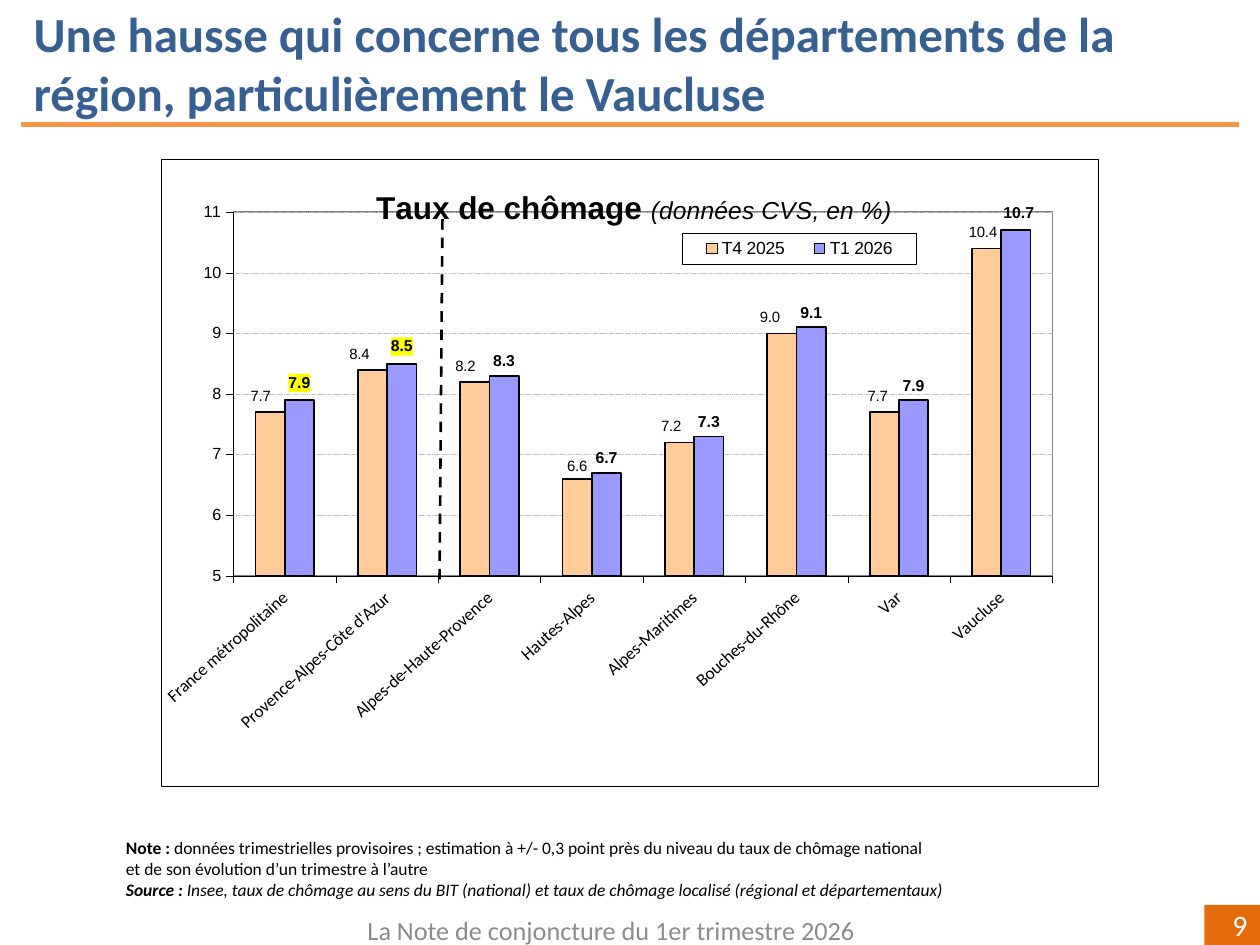
from dataclasses import dataclass

from lxml import etree
from pptx import Presentation
from pptx.chart.data import CategoryChartData
from pptx.dml.color import RGBColor
from pptx.enum.chart import XL_CHART_TYPE, XL_LABEL_POSITION, XL_LEGEND_POSITION, XL_TICK_MARK
from pptx.enum.dml import MSO_LINE
from pptx.enum.shapes import MSO_CONNECTOR, MSO_SHAPE
from pptx.enum.text import MSO_ANCHOR, PP_ALIGN
from pptx.oxml import parse_xml
from pptx.oxml.ns import nsdecls, qn
from pptx.util import Cm, Pt


@dataclass(frozen=True)
class Theme:
    heading: str = "376092"
    rule: str = "F79646"
    badge: str = "E46C0A"
    footer: str = "8C8C8C"
    black: str = "000000"
    white: str = "FFFFFF"
    grid: str = "C0C0C0"
    plot_border: str = "808080"
    highlight: str = "FFFF00"
    previous_quarter: str = "FFCC99"
    current_quarter: str = "9999FF"
    text_font: str = "Calibri"
    chart_font: str = "Arial"
    heading_size: float = 28
    badge_size: float = 17
    footer_size: float = 15
    note_size: float = 10
    chart_title_size: float = 18
    chart_unit_size: float = 14
    legend_size: float = 10
    category_size: float = 10
    value_size: float = 9.2
    label_size: float = 8.5
    strong_label_size: float = 9


THEME = Theme()
CATEGORIES = ["France métropolitaine", "Provence-Alpes-Côte d'Azur", "Alpes-de-Haute-Provence",
              "Hautes-Alpes", "Alpes-Maritimes", "Bouches-du-Rhône", "Var", "Vaucluse"]
PREVIOUS_RATES = [7.7, 8.4, 8.2, 6.6, 7.2, 9.0, 7.7, 10.4]
CURRENT_RATES = [7.9, 8.5, 8.3, 6.7, 7.3, 9.1, 7.9, 10.7]
# Horizontal label shifts, as fractions of the chart width
PREVIOUS_SHIFTS = {0: -0.01, 1: -0.014, 2: -0.01, 4: -0.009, 5: -0.013, 6: -0.007, 7: -0.004}
CURRENT_SHIFTS = {0: 0, 1: 0, 7: 0.003}


def set_font(font, size, color=THEME.black, name=THEME.text_font, bold=False, italic=False):
    font.size, font.name, font.bold, font.italic = Pt(size), name, bold, italic
    font.color.rgb = RGBColor.from_string(color)


def add_run(paragraph, text, **text_format):
    run = paragraph.add_run()
    run.text = text
    set_font(run.font, **text_format)


def set_line(line, color, width):
    line.color.rgb = RGBColor.from_string(color)
    line.width = Pt(width)


def set_fill(fill, color):
    fill.solid()
    fill.fore_color.rgb = RGBColor.from_string(color)


def area_format(fill, border=None, width=0.25):
    """Return chart spPr XML for parts that have no public format."""
    line = ""
    if border:
        line = (f'<a:ln w="{Pt(width)}"><a:solidFill><a:srgbClr val="{border}"/>'
                "</a:solidFill></a:ln>")
    return parse_xml(f'<c:spPr {nsdecls("c", "a")}><a:solidFill><a:srgbClr val="{fill}"/>'
                     f"</a:solidFill>{line}</c:spPr>")


def place_part(part, successor, **values):
    """Give a chart part a manual layout, set just before its successor element."""
    for old in part.findall(qn("c:layout")):
        part.remove(old)
    items = "".join(f'<c:{key} val="{value}"/>' for key, value in values.items())
    layout = parse_xml(f'<c:layout {nsdecls("c")}><c:manualLayout>{items}'
                       "</c:manualLayout></c:layout>")
    part.find(qn(successor)).addprevious(layout)


class SlideBuilder:
    def __init__(self, slide, theme):
        self.slide = slide
        self.theme = theme

    def text(self, box, paragraphs, align=PP_ALIGN.LEFT, anchor=MSO_ANCHOR.TOP,
             insets=None, fill=None):
        """Add paragraphs, each a list of (text, format) pairs, in a box or filled rectangle."""
        left, top, width, height = map(Cm, box)
        if fill:
            shape = self.slide.shapes.add_shape(MSO_SHAPE.RECTANGLE, left, top, width, height)
            shape.shadow.inherit = False
            set_fill(shape.fill, fill)
            shape.line.fill.background()
        else:
            shape = self.slide.shapes.add_textbox(left, top, width, height)
        frame = shape.text_frame
        frame.word_wrap = True
        frame.vertical_anchor = anchor
        if insets:
            (frame.margin_left, frame.margin_top,
             frame.margin_right, frame.margin_bottom) = map(Cm, insets)
        for index, runs in enumerate(paragraphs):
            paragraph = frame.add_paragraph() if index else frame.paragraphs[0]
            paragraph.alignment = align
            for text, text_format in runs:
                add_run(paragraph, text, **text_format)

    def line(self, start, end, color, width, dash=None):
        connector = self.slide.shapes.add_connector(
            MSO_CONNECTOR.STRAIGHT, *map(Cm, start), *map(Cm, end))
        set_line(connector.line, color, width)
        if dash:
            connector.line.dash_style = dash
        etree.SubElement(connector._element.spPr, qn("a:effectLst"))

    def unemployment_chart(self, box):
        theme = self.theme
        data = CategoryChartData(number_format="0.0")
        data.categories = CATEGORIES
        data.add_series("T4 2025", PREVIOUS_RATES)
        data.add_series("T1 2026", CURRENT_RATES)
        chart = self.slide.shapes.add_chart(
            XL_CHART_TYPE.COLUMN_CLUSTERED, *map(Cm, box), data).chart
        set_font(chart.font, theme.label_size, name=theme.chart_font)
        chart_part = chart._chartSpace.find(qn("c:chart"))
        chart_part.addnext(area_format(theme.white, theme.black))
        plot_area = chart_part.find(qn("c:plotArea"))
        place_part(plot_area, "c:barChart", layoutTarget="inner", xMode="edge", yMode="edge",
                   x=0.077, y=0.085, w=0.874, h=0.58)
        plot_area.append(area_format(theme.white, theme.plot_border, 1))
        plot = chart.plots[0]
        plot.gap_width, plot.overlap, plot.vary_by_categories = 150, 0, False

        self.chart_title(chart)
        self.chart_legend(chart)
        self.chart_axes(chart)
        previous, current = plot.series
        self.chart_series(previous, theme.previous_quarter, PREVIOUS_SHIFTS,
                          size=theme.label_size)
        self.chart_series(current, theme.current_quarter, CURRENT_SHIFTS, highlighted=(0, 1),
                          size=theme.strong_label_size, bold=True)

    def chart_title(self, chart):
        theme = self.theme
        chart.has_title = True
        paragraph = chart.chart_title.text_frame.paragraphs[0]
        add_run(paragraph, "Taux de chômage ", size=theme.chart_title_size,
                name=theme.chart_font, bold=True)
        add_run(paragraph, "(données CVS, en %)", size=theme.chart_unit_size,
                name=theme.chart_font, italic=True)
        title = chart.chart_title._element
        title.find(qn("c:overlay")).set("val", "1")
        place_part(title, "c:overlay", xMode="edge", yMode="edge", x=0.225, y=0.04)

    def chart_legend(self, chart):
        chart.has_legend = True
        legend = chart.legend
        legend.position = XL_LEGEND_POSITION.RIGHT
        legend.include_in_layout = False
        set_font(legend.font, self.theme.legend_size, name=self.theme.chart_font)
        place_part(legend._element, "c:overlay", xMode="edge", yMode="edge",
                   x=0.556, y=0.118, w=0.25, h=0.05)
        legend._element.find(qn("c:overlay")).addnext(
            area_format(self.theme.white, self.theme.black))

    def chart_axes(self, chart):
        theme = self.theme
        for axis, size, font in ((chart.category_axis, theme.category_size, theme.text_font),
                                 (chart.value_axis, theme.value_size, theme.chart_font)):
            axis.major_tick_mark = XL_TICK_MARK.OUTSIDE
            set_font(axis.tick_labels.font, size, name=font)
            set_line(axis.format.line, theme.black, 0.25)
        label_body = chart.category_axis._element.find(qn("c:txPr")).find(qn("a:bodyPr"))
        label_body.set("rot", str(-42 * 60000))
        axis = chart.value_axis
        axis.minimum_scale, axis.maximum_scale, axis.major_unit = 5, 11, 1
        axis.tick_labels.number_format = "0"
        axis.tick_labels.number_format_is_linked = False
        grid_line = axis.major_gridlines.format.line
        set_line(grid_line, theme.grid, 0.25)
        grid_line.dash_style = MSO_LINE.SQUARE_DOT

    def chart_series(self, series, color, shifts, highlighted=(), **label_format):
        set_fill(series.format.fill, color)
        set_line(series.format.line, self.theme.black, 1)
        labels = series.data_labels
        labels.show_value = True
        labels.number_format, labels.number_format_is_linked = "0.0", False
        labels.position = XL_LABEL_POSITION.OUTSIDE_END
        set_font(labels.font, name=self.theme.chart_font, **label_format)
        for index, shift in shifts.items():
            label = series.points[index].data_label
            set_font(label.font, name=self.theme.chart_font, **label_format)
            label.position = XL_LABEL_POSITION.OUTSIDE_END
            element = series._element.xpath(f'c:dLbls/c:dLbl[c:idx/@val="{index}"]')[0]
            text_format = element.find(qn("c:txPr"))
            text_format.addprevious(parse_xml(
                f'<c:numFmt {nsdecls("c")} formatCode="0.0" sourceLinked="0"/>'))
            place_part(element, "c:numFmt", x=shift, y=-0.005)
            if index in highlighted:
                text_format.addprevious(area_format(self.theme.highlight))


def main():
    presentation = Presentation()
    presentation.slide_width, presentation.slide_height = Cm(25.4), Cm(19.05)
    builder = SlideBuilder(presentation.slides.add_slide(presentation.slide_layouts[6]), THEME)

    heading = dict(size=THEME.heading_size, color=THEME.heading, bold=True)
    builder.text((0.43, -0.05, 24.97, 2.64), [[(
        "Une hausse qui concerne tous les départements de la région, "
        "particulièrement le Vaucluse", heading)]])
    builder.line((0.43, 2.51), (24.97, 2.51), THEME.rule, 3)
    builder.text((24.28, 18.24, 1.12, 0.81),
                 [[("9", dict(size=THEME.badge_size, color=THEME.white))]],
                 align=PP_ALIGN.RIGHT, anchor=MSO_ANCHOR.MIDDLE, fill=THEME.badge)
    builder.text((6.12, 18.24, 12.4, 1.02), [[(
        "La Note de conjoncture du 1er trimestre 2026",
        dict(size=THEME.footer_size, color=THEME.footer))]],
        align=PP_ALIGN.CENTER, anchor=MSO_ANCHOR.MIDDLE)

    note = dict(size=THEME.note_size)
    source = dict(note, italic=True)
    builder.text((2.49, 16.79, 17.35, 1.35), [
        [("Note : ", dict(note, bold=True)),
         ("données trimestrielles provisoires ; estimation à +/- 0,3 point près du niveau "
          "du taux de chômage national", note)],
        [("et de son évolution d’un trimestre à l’autre", note)],
        [("Source : ", dict(source, bold=True)),
         ("Insee, taux de chômage au sens du BIT (national) et taux de chômage localisé "
          "(régional et départementaux)", source)],
    ], insets=(0.05, 0.08, 0, 0))

    builder.unemployment_chart((3.25, 3.2, 18.9, 12.65))
    builder.line((8.86, 11.68), (8.92, 4.32), THEME.black, 1.5, MSO_LINE.DASH)
    presentation.save("out.pptx")


if __name__ == "__main__":
    main()
